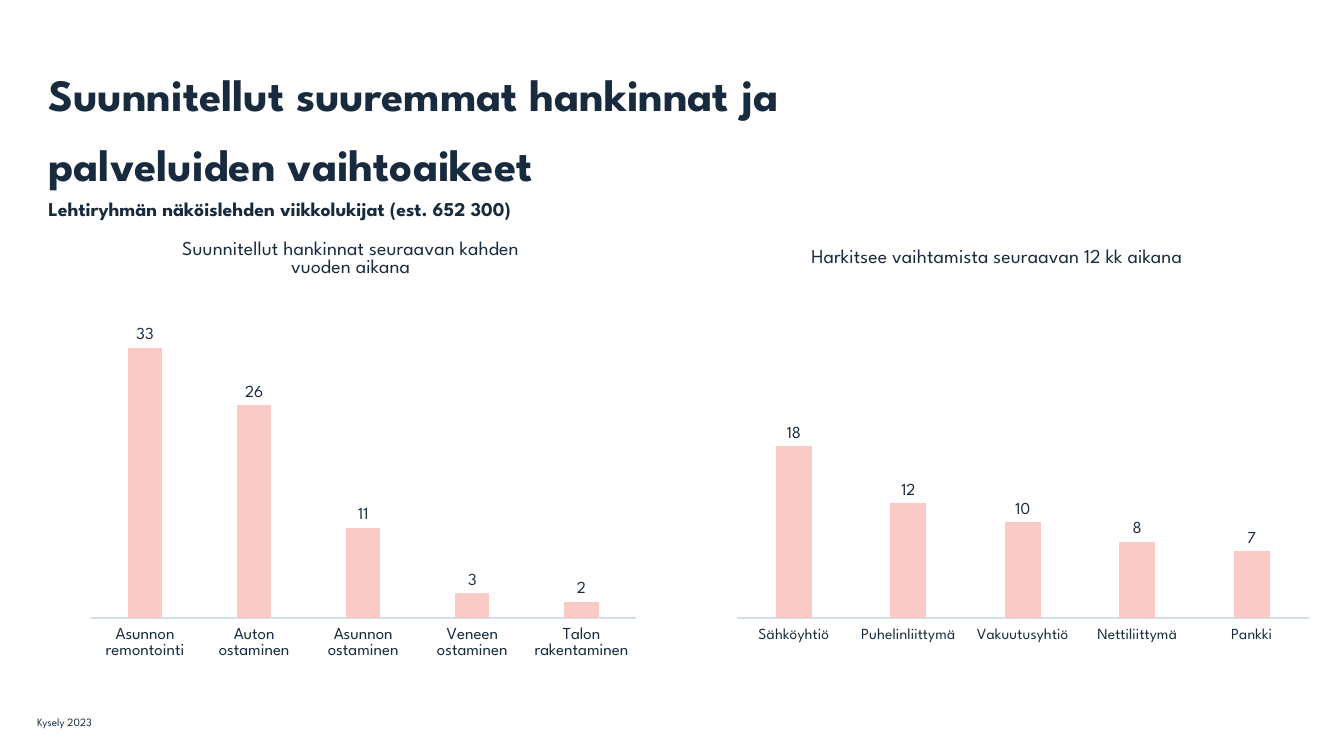
from lxml import etree
from pptx import Presentation
from pptx.chart.data import CategoryChartData
from pptx.dml.color import RGBColor
from pptx.enum.chart import XL_CHART_TYPE, XL_LABEL_POSITION, XL_TICK_LABEL_POSITION, XL_TICK_MARK
from pptx.enum.text import MSO_ANCHOR, MSO_AUTO_SIZE, PP_ALIGN
from pptx.oxml import parse_xml
from pptx.util import Inches, Pt

COLUMN = XL_CHART_TYPE.COLUMN_CLUSTERED
OUTSIDE = XL_LABEL_POSITION.OUTSIDE_END
LOW = XL_TICK_LABEL_POSITION.LOW
NO_TICK = XL_TICK_MARK.NONE
TOP, MIDDLE = MSO_ANCHOR.TOP, MSO_ANCHOR.MIDDLE
LEFT = PP_ALIGN.LEFT
NO_FIT = MSO_AUTO_SIZE.NONE

HEADLINE = ["Suunnitellut suuremmat hankinnat ja", "palveluiden vaihtoaikeet"]
AUDIENCE = "Lehtiryhmän näköislehden viikkolukijat (est. 652 300)"
SURVEY = "Kysely 2023"
CHARTS = [
    {
        "title": "Suunnitellut hankinnat seuraavan kahden\nvuoden aikana",
        "shares": {"Asunnon remontointi": 33, "Auton ostaminen": 26, "Asunnon ostaminen": 11,
                   "Veneen ostaminen": 3, "Talon rakentaminen": 2},
        "left": 0.5, "width": 5.94, "title_at": (0.215, 0.035), "label_size": 12, "maximum": 35,
    },
    {
        "title": "Harkitsee vaihtamista seuraavan 12 kk aikana",
        "shares": {"Sähköyhtiö": 18, "Puhelinliittymä": 12, "Vakuutusyhtiö": 10,
                   "Nettiliittymä": 8, "Pankki": 7},
        "left": 6.89, "width": 6.23, "title_at": (0.18, 0.05), "label_size": 11, "maximum": 30,
    },
]
CHART_TOP, CHART_HEIGHT = 2.19, 4.6
PLOT = {"x": 0.067, "y": 0.239, "w": 0.911, "h": 0.618}
COLORS = {"ink": "182A3D", "bar": "F9CAC6", "axis": "D1DFED"}
FONT = "League Spartan"
CHART_NS = "http://schemas.openxmlformats.org/drawingml/2006/chart"


def color(key):
    return RGBColor.from_string(COLORS[key])


def apply(target, values):
    for key, value in values.items():
        setattr(target, key, value)


def style(font, size, bold=False):
    apply(font, {"name": FONT, "size": Pt(size), "bold": bold})
    font.color.rgb = color("ink")


def manual_layout(parent, shares, before, inner=False):
    for old in parent.findall(f"{{{CHART_NS}}}layout"):
        parent.remove(old)
    layout = parse_xml(f'<c:layout xmlns:c="{CHART_NS}"><c:manualLayout/></c:layout>')
    settings = {"layoutTarget": "inner"} if inner else {}
    settings.update({"xMode": "edge", "yMode": "edge"})
    settings.update(shares)
    for key, value in settings.items():
        etree.SubElement(layout[0], f"{{{CHART_NS}}}{key}").set("val", str(value))
    parent.insert(before, layout)


def add_share_chart(slide, content):
    data = CategoryChartData()
    data.categories = list(content["shares"])
    data.add_series("Series 1", list(content["shares"].values()))
    frame = slide.shapes.add_chart(COLUMN, Inches(content["left"]), Inches(CHART_TOP),
                                   Inches(content["width"]), Inches(CHART_HEIGHT), data)
    chart = frame.chart
    style(chart.font, 10)
    apply(chart, {"has_legend": False, "has_title": True})
    title = chart.chart_title
    title.include_in_layout = False
    title.text_frame.text = content["title"]
    for line in title.text_frame.paragraphs:
        style(line.font, 14)
        style(line.runs[0].font, 14)
    manual_layout(title._element, dict(zip("xy", content["title_at"])), 1)
    manual_layout(chart._chartSpace.chart.plotArea, PLOT, 0, inner=True)

    apply(chart.value_axis, {"visible": False, "has_major_gridlines": False,
                             "minimum_scale": 0, "maximum_scale": content["maximum"]})
    categories = chart.category_axis
    apply(categories, {"major_tick_mark": NO_TICK, "minor_tick_mark": NO_TICK,
                       "tick_label_position": LOW, "has_major_gridlines": False})
    style(categories.tick_labels.font, content["label_size"])
    categories.format.line.color.rgb = color("axis")
    categories.format.line.width = Pt(0.75)

    plot = chart.plots[0]
    apply(plot, {"gap_width": 219, "overlap": -27, "vary_by_categories": False,
                 "has_data_labels": True})
    apply(plot.data_labels, {"show_value": True, "position": OUTSIDE})
    style(plot.data_labels.font, 12)
    bars = plot.series[0].format.fill
    bars.solid()
    bars.fore_color.rgb = color("bar")


def add_heading(slide):
    heading = slide.shapes.title
    apply(heading, {"left": Inches(0.48), "top": Inches(0.5),
                    "width": Inches(12.36), "height": Inches(0.81)})
    frame = heading.text_frame
    apply(frame, {"margin_left": 0, "margin_right": 0, "margin_top": 0, "margin_bottom": 0,
                  "vertical_anchor": TOP, "word_wrap": True, "auto_size": NO_FIT})
    paragraph = frame.paragraphs[0]
    apply(paragraph, {"alignment": LEFT, "line_spacing": 1.3})
    for words in HEADLINE:
        run = paragraph.add_run()
        run.text = words
        style(run.font, 32, True)
        paragraph.add_line_break()
    run = paragraph.add_run()
    run.text = AUDIENCE
    style(run.font, 14, True)


def add_survey(slide):
    box = slide.shapes.add_textbox(Inches(0.27), Inches(6.96), Inches(1.05), Inches(0.4))
    apply(box.text_frame, {"word_wrap": True, "vertical_anchor": MIDDLE, "text": SURVEY})
    style(box.text_frame.paragraphs[0].runs[0].font, 8)


def main():
    deck = Presentation()
    apply(deck, {"slide_width": Inches(13.33), "slide_height": Inches(7.5)})
    slide = deck.slides.add_slide(deck.slide_layouts[5])
    add_heading(slide)
    for content in CHARTS:
        add_share_chart(slide, content)
    add_survey(slide)
    deck.save("out.pptx")


if __name__ == "__main__":
    main()
